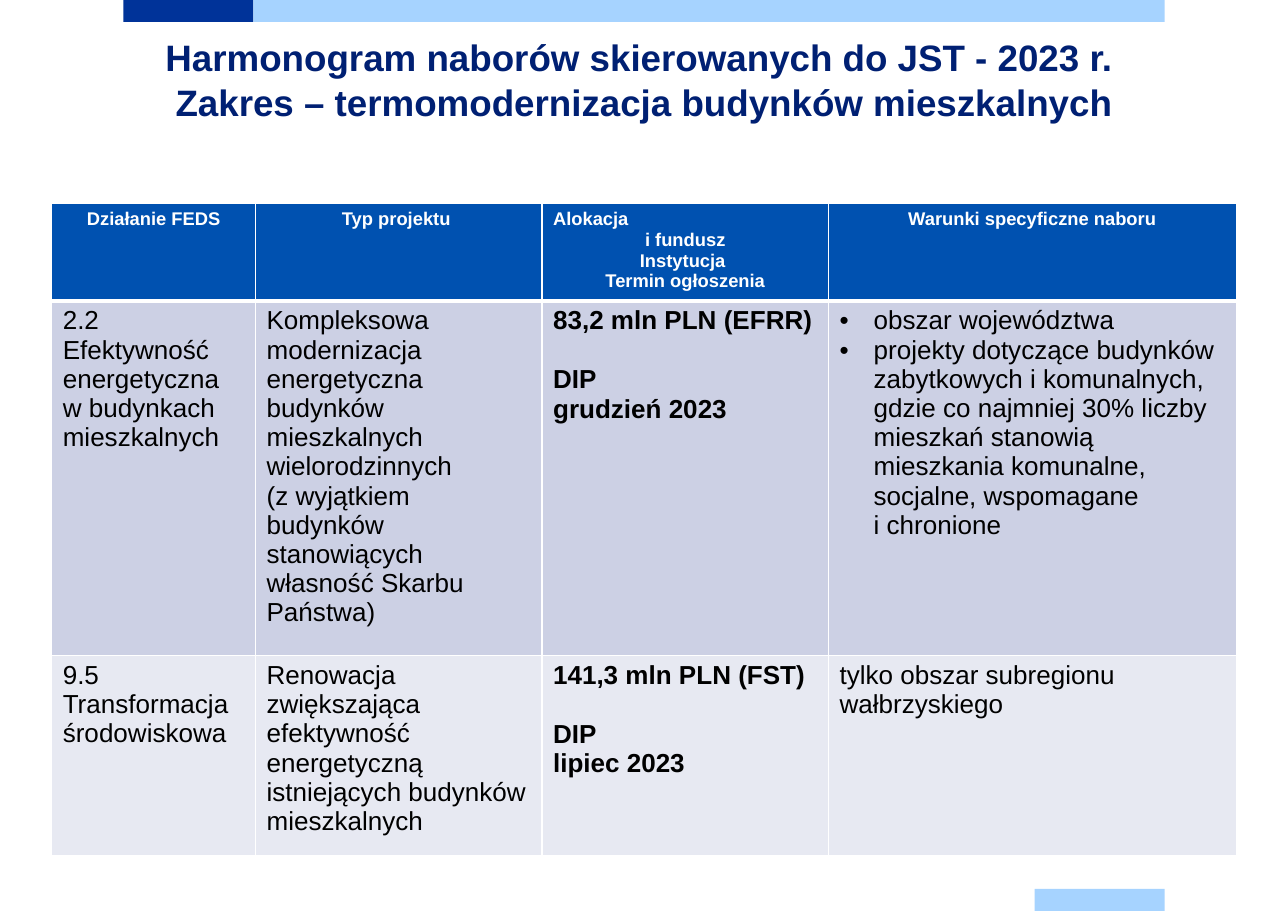
from dataclasses import dataclass

from lxml.etree import SubElement
from pptx import Presentation
from pptx.dml.color import RGBColor as RGB
from pptx.enum.shapes import MSO_SHAPE as Shape
from pptx.enum.text import MSO_ANCHOR as Anchor, MSO_AUTO_SIZE as Fit, PP_ALIGN as Align
from pptx.oxml.ns import qn
from pptx.util import Inches, Pt


@dataclass(frozen=True)
class Theme:
    face: str = "Arial"
    navy: str = "003399"
    sky: str = "A6D3FF"
    title: str = "002073"
    head: str = "0051B0"
    bands: tuple = ("CCD0E4", "E7E9F2")
    white: str = "FFFFFF"
    black: str = "000000"
    big: int = 24
    body: int = 17
    small: int = 12


T = Theme()
GAP = 19.5  # one body line, in points

TITLE = ["Harmonogram naborów skierowanych do JST - 2023 r. ",
         "Zakres – termomodernizacja budynków mieszkalnych"]
HEADS = [["Działanie FEDS"], ["Typ projektu "],
         ["Alokacja", "i fundusz", "Instytucja ", "Termin ogłoszenia"],
         ["Warunki specyficzne naboru"]]
ROWS = [
    [["2.2 Efektywność energetyczna \nw budynkach mieszkalnych"],
     ["Kompleksowa modernizacja energetyczna budynków mieszkalnych wielorodzinnych \n"
      "(z wyjątkiem budynków stanowiących własność Skarbu Państwa)"],
     ["83,2 mln PLN (EFRR)", "DIP", "grudzień 2023"],
     ["obszar województwa",
      "projekty dotyczące budynków zabytkowych i komunalnych, gdzie co najmniej 30% liczby "
      "mieszkań stanowią mieszkania komunalne, socjalne, wspomagane \ni chronione"]],
    [["9.5 Transformacja środowiskowa"],
     ["Renowacja zwiększająca efektywność energetyczną istniejących budynków mieszkalnych"],
     ["141,3 mln PLN (FST)", "DIP", "lipiec 2023"],
     ["tylko obszar subregionu wałbrzyskiego"]],
]
COLS = [1.85, 2.6, 2.6, 3.7]
HIGH = [0.88, 3.22, 1.82]


def bullet(par):
    props = par._p.get_or_add_pPr()
    props.set("marL", str(Inches(0.31)))
    props.set("indent", str(Inches(-0.31)))
    SubElement(props, qn("a:buFont"), typeface=T.face)
    SubElement(props, qn("a:buChar"), char="•")


def write(frame, lines, size, color, bold=False, align=Align.LEFT, dots=False):
    for i, line in enumerate(lines):
        par = frame.paragraphs[0] if i == 0 else frame.add_paragraph()
        par.text = line
        par.alignment = align
        if dots:
            bullet(par)
        font = par.font
        font.name, font.size, font.bold = T.face, Pt(size), bold
        font.color.rgb = RGB.from_string(color)


def border(cell, low):
    props = cell._tc.get_or_add_tcPr()
    for i, side in enumerate(("lnL", "lnR", "lnT", "lnB")):
        width = low if side == "lnB" else 1
        line = SubElement(props, qn(f"a:{side}"), w=str(Pt(width)))
        fill = SubElement(line, qn("a:solidFill"))
        SubElement(fill, qn("a:srgbClr"), val=T.white)
        props.insert(i, line)


def paint(cell, color, low=1):
    cell.fill.solid()
    cell.fill.fore_color.rgb = RGB.from_string(color)
    border(cell, low)


# Bars along the top and bottom edges
def bars(slide, x, y, w, h):
    wide, thick = 1.18, 0.2
    for left, top, span, color in ((x, y, wide, T.navy),
                                   (x + wide, y, w - wide, T.sky),
                                   (x + w - wide, y + h - thick, wide, T.sky)):
        bar = slide.shapes.add_shape(Shape.RECTANGLE, Inches(left), Inches(top),
                                     Inches(span), Inches(thick))
        bar.shadow.inherit = False
        bar.fill.solid()
        bar.fill.fore_color.rgb = RGB.from_string(color)
        bar.line.fill.background()


# Heading
def heading(slide, x, y, w, h):
    box = slide.shapes.title
    box.left, box.top, box.width, box.height = map(Inches, (x, y, w, h))
    frame = box.text_frame
    frame.word_wrap, frame.auto_size = True, Fit.NONE
    frame.vertical_anchor = Anchor.TOP
    write(frame, TITLE, T.big, T.title, True, Align.CENTER)


# Schedule of calls
def schedule(slide, x, y):
    grid = slide.shapes.add_table(len(HIGH), len(COLS), Inches(x), Inches(y),
                                  Inches(sum(COLS)), Inches(sum(HIGH))).table
    for col, width in zip(grid.columns, COLS):
        col.width = Inches(width)
    for row, height in zip(grid.rows, HIGH):
        row.height = Inches(height)

    for c, lines in enumerate(HEADS):
        cell = grid.cell(0, c)
        write(cell.text_frame, lines, T.small, T.white, True, Align.CENTER)
        paint(cell, T.head, 3)
    grid.cell(0, 2).text_frame.paragraphs[0].alignment = Align.LEFT

    for r, (row, band) in enumerate(zip(ROWS, T.bands), 1):
        for c, lines in enumerate(row):
            cell = grid.cell(r, c)
            write(cell.text_frame, lines, T.body, T.black, c == 2,
                  dots=c == 3 and len(lines) > 1)
            paint(cell, band, 1)
        grid.cell(r, 2).text_frame.paragraphs[1].space_before = Pt(GAP)


def main():
    deck = Presentation()
    deck.slide_width, deck.slide_height = Inches(11.69), Inches(8.27)
    slide = deck.slides.add_slide(deck.slide_layouts[5])
    bars(slide, 1.12, 0, 9.45, 8.27)
    heading(slide, 1.12, 0.27, 9.45, 0.91)
    schedule(slide, 0.47, 1.85)
    deck.save("out.pptx")


if __name__ == "__main__":
    main()
